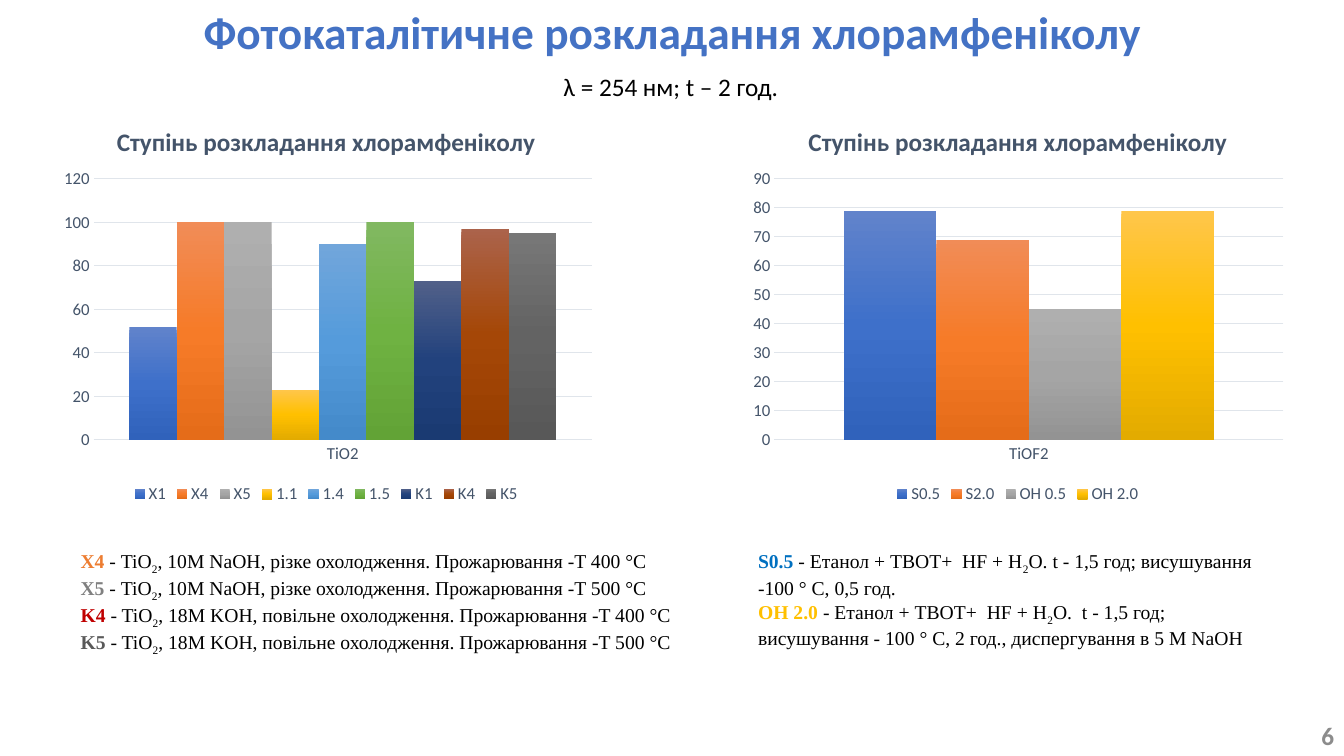
from copy import deepcopy
from lxml import etree
from pptx import Presentation
from pptx.chart.data import CategoryChartData as Data
from pptx.dml.color import RGBColor as RGB
from pptx.enum.chart import XL_CHART_TYPE as Kind, XL_LEGEND_POSITION as Place
from pptx.enum.chart import XL_TICK_MARK as Tick
from pptx.enum.text import MSO_ANCHOR as Anchor, MSO_AUTO_SIZE as Auto
from pptx.enum.text import PP_ALIGN as Align
from pptx.oxml.ns import qn
from pptx.util import Inches, Pt

SANS, SERIF = "Calibri", "Times New Roman"
BLACK = RGB(0x00, 0x00, 0x00)
BLUE = RGB(0x44, 0x72, 0xC4)
SLATE = RGB(0x44, 0x54, 0x6A)
PALE = RGB(0xE0, 0xE5, 0xEB)
GRAY = RGB(0x8C, 0x8C, 0x8C)
ORANGE = RGB(0xED, 0x7D, 0x31)
SILVER = RGB(0x80, 0x80, 0x80)
RED = RGB(0xC0, 0x00, 0x00)
DARK = RGB(0x59, 0x59, 0x59)
AZURE = RGB(0x00, 0x70, 0xC0)
GOLD = RGB(0xFF, 0xC0, 0x00)

# Top, middle and bottom colour of each bar
SHADES = [
    (RGB(0x61, 0x83, 0xCB), RGB(0x3E, 0x70, 0xCA), RGB(0x30, 0x62, 0xBB)),
    (RGB(0xF1, 0x8C, 0x57), RGB(0xF6, 0x7B, 0x28), RGB(0xE5, 0x6C, 0x19)),
    (RGB(0xAF, 0xAF, 0xAF), RGB(0xA5, 0xA5, 0xA5), RGB(0x93, 0x93, 0x93)),
    (RGB(0xFF, 0xC6, 0x4B), RGB(0xFF, 0xC0, 0x00), RGB(0xE3, 0xAB, 0x00)),
    (RGB(0x71, 0xA6, 0xDB), RGB(0x55, 0x9B, 0xDB), RGB(0x44, 0x8A, 0xCA)),
    (RGB(0x81, 0xB8, 0x61), RGB(0x6F, 0xB2, 0x42), RGB(0x62, 0xA3, 0x36)),
    (RGB(0x51, 0x60, 0x89), RGB(0x22, 0x42, 0x7D), RGB(0x1A, 0x3A, 0x72)),
    (RGB(0xAB, 0x63, 0x4B), RGB(0xA5, 0x47, 0x07), RGB(0x98, 0x3E, 0x00)),
    (RGB(0x77, 0x77, 0x77), RGB(0x63, 0x63, 0x63), RGB(0x58, 0x58, 0x58)),
]
HEAD = "Ступінь розкладання хлорамфеніколу"
OXIDE = {"X1": 52, "X4": 100, "X5": 100, "1.1": 23, "1.4": 90,
         "1.5": 100, "K1": 73, "K4": 97, "K5": 95}
FLUOR = {"S0.5": 79, "S2.0": 69, "OH 0.5": 45, "OH 2.0": 79}

SOFT = "10М NaOH, різке охолодження"
HARD = "18М KOH, повільне охолодження"
# Each note: label, label colour, text before and after the subscript 2
LEFT = [(name, tint, " - TiO", f", {way}. Прожарювання -T {heat} °C")
        for name, tint, way, heat in [
            ("Х4", ORANGE, SOFT, 400), ("Х5", SILVER, SOFT, 500),
            ("K4", RED, HARD, 400), ("K5", DARK, HARD, 500)]]
RIGHT = [
    ("S0.5", AZURE, " - Етанол + ТВОТ+  НF + H",
     "O. t - 1,5 год; висушування -100 ° С, 0,5 год."),
    ("OH 2.0 ", GOLD, "- Етанол + ТВОТ+  НF + H", "O.  t - 1,5 год;"),
]
TAIL = "висушування - 100 ° С, 2 год., диспергування в 5 М NaOH"


def style(font, size, color, bold=False, name=SANS):
    font.size, font.bold, font.name = Pt(size), bold, name
    font.color.rgb = color


def text_box(slide, box, wrap=True):
    frame = slide.shapes.add_textbox(*map(Inches, box)).text_frame
    frame.word_wrap = wrap
    return frame


def add_title(slide, box, text):
    title = slide.shapes.title
    title.left, title.top, title.width, title.height = map(Inches, box)
    frame = title.text_frame
    frame.text, frame.vertical_anchor = text, Anchor.MIDDLE
    frame.auto_size = Auto.NONE
    para = frame.paragraphs[0]
    para.alignment, para.line_spacing = Align.CENTER, 0.9
    style(para.font, 32.4, BLUE, True)


def add_line(slide, box, text, size, color, bold=False, align=Align.LEFT, wrap=True):
    frame = text_box(slide, box, wrap)
    frame.text, frame.vertical_anchor = text, Anchor.MIDDLE
    para = frame.paragraphs[0]
    para.alignment = align
    style(para.font, size, color, bold)


def shade(fill, tints):
    """Fill with an even gradient that runs from top to bottom."""
    fill.gradient()
    fill.gradient_angle = 270
    stops = fill._fill._gradFill.find(qn("a:gsLst"))
    stops.append(deepcopy(stops[-1]))
    for i, (stop, tint) in enumerate(zip(fill.gradient_stops, tints)):
        stop.position, stop.color.rgb = i / 2, tint


def set_plot(chart, area):
    """Fix the inner plot area, given as shares of the chart."""
    plot = chart._chartSpace.find(".//" + qn("c:plotArea"))
    for old in plot.findall(qn("c:layout")):
        plot.remove(old)
    layout = etree.Element(qn("c:layout"))
    plot.insert(0, layout)
    manual = etree.SubElement(layout, qn("c:manualLayout"))
    pairs = [("layoutTarget", "inner"), ("xMode", "edge"), ("yMode", "edge")]
    for tag, val in pairs + list(zip("xywh", area)):
        etree.SubElement(manual, qn("c:" + tag)).set("val", str(val))


def add_bars(slide, box, name, values, top, step, area):
    data = Data()
    data.categories = [name]
    for key, value in values.items():
        data.add_series(key, [value])
    chart = slide.shapes.add_chart(
        Kind.COLUMN_CLUSTERED, *map(Inches, box), data).chart
    style(chart.font, 12, SLATE)
    chart.has_title = True
    chart.chart_title.include_in_layout = False
    frame = chart.chart_title.text_frame
    frame.text = HEAD
    style(frame.paragraphs[0].font, 18, SLATE, True)
    chart.has_legend = True
    chart.legend.position = Place.BOTTOM
    chart.legend.include_in_layout = False
    style(chart.legend.font, 12, SLATE)

    plot = chart.plots[0]
    plot.gap_width, plot.overlap, plot.vary_by_categories = 150, 0, False
    for bar, tints in zip(plot.series, SHADES):
        shade(bar.format.fill, tints)

    for axis in (chart.category_axis, chart.value_axis):
        axis.major_tick_mark = axis.minor_tick_mark = Tick.NONE
        style(axis.tick_labels.font, 12, SLATE)
    scale = chart.value_axis
    scale.minimum_scale, scale.maximum_scale, scale.major_unit = 0, top, step
    scale.format.line.fill.background()
    for part in (chart.category_axis, scale.major_gridlines):
        part.format.line.color.rgb = PALE
        part.format.line.width = Pt(0.75)
    set_plot(chart, area)


def add_notes(slide, box, notes, tail="", indent=0, align=Align.LEFT):
    frame = text_box(slide, box)

    def new_para():
        para = frame.add_paragraph() if frame.paragraphs[0].runs else frame.paragraphs[0]
        para.alignment = align
        para._p.get_or_add_pPr().set("indent", str(Inches(indent)))
        style(para.font, 14, BLACK, name=SERIF)
        return para

    for label, tint, before, after in notes:
        para = new_para()
        for text in (label, before, "2", after):
            run = para.add_run()
            run.text = text
            style(run.font, 14, tint if text == label else BLACK, text == label, SERIF)
            if text == "2":
                run.font._element.set("baseline", "-25000")
    if tail:
        run = new_para().add_run()
        run.text = tail
        style(run.font, 14, BLACK, name=SERIF)


def main():
    deck = Presentation()
    deck.slide_width, deck.slide_height = Inches(13.33), Inches(7.5)
    slide = deck.slides.add_slide(deck.slide_layouts[5])
    add_title(slide, (0.92, 0.06, 11.5, 0.57),
              "Фотокаталітичне розкладання хлорамфеніколу")
    add_line(slide, (5.49, 0.66, 2.36, 0.4), "λ = 254 нм; t – 2 год.",
             18, BLACK, wrap=False)
    add_bars(slide, (0.49, 1.06, 5.49, 3.98), "TiO2", OXIDE, 120, 20,
             (0.08, 0.18, 0.9, 0.65))
    add_bars(slide, (7.35, 1.06, 5.49, 3.98), "TiOF2", FLUOR, 90, 10,
             (0.06, 0.18, 0.92, 0.65))
    add_notes(slide, (0.21, 5.4, 6.69, 1.04), LEFT, indent=0.49, align=Align.JUSTIFY)
    add_notes(slide, (7.42, 5.4, 5.43, 1.04), RIGHT, TAIL)
    add_line(slide, (10.33, 7.1, 3, 0.4), "6", 18, GRAY, True, Align.RIGHT)
    deck.save("out.pptx")


if __name__ == "__main__":
    main()
